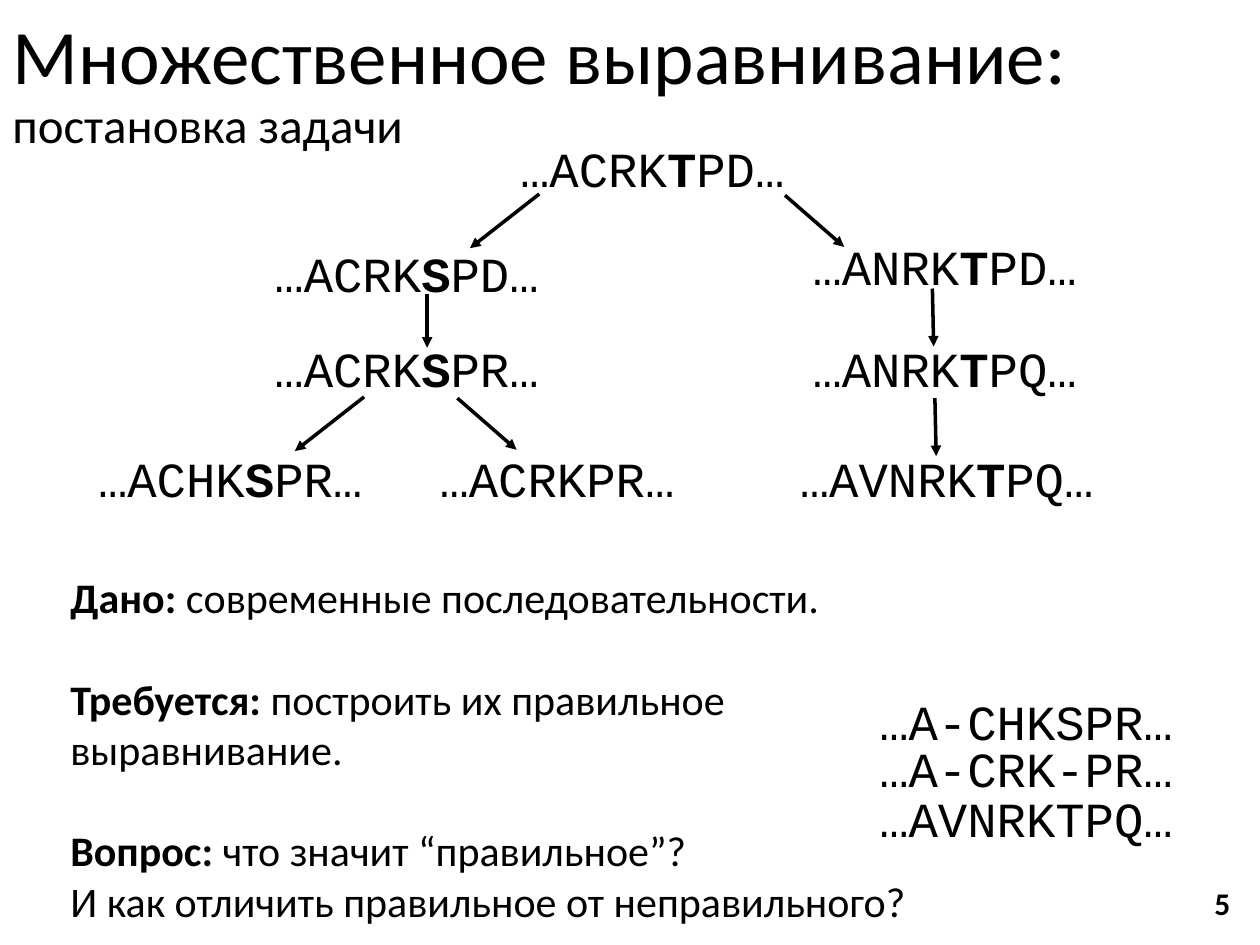
"""Build the slide that states the multiple sequence alignment problem."""
from dataclasses import dataclass

from lxml import etree
from pptx import Presentation
from pptx import util as u
from pptx.dml.color import RGBColor
from pptx.enum import shapes, text
from pptx.oxml import ns

PX = u.Inches(1) // 100
COLORS = {"ink": "000000"}
SANS, MONO = "Calibri", "Courier New"
SEQ_HEIGHT = 57


@dataclass(frozen=True)
class Run:
    text: str
    bold: bool = False
    size: int | None = None


@dataclass(frozen=True)
class Sequence:
    left: int
    top: int
    runs: tuple[Run, ...]

    @property
    def width(self) -> int:
        return 22 + 70 * sum(len(run.text) for run in self.runs) // 3


@dataclass(frozen=True)
class Arrow:
    x1: int
    y1: int
    x2: int
    y2: int


def marked(head: str, residue: str, tail: str) -> tuple[Run, ...]:
    return Run(head), Run(residue, True), Run(tail)


TITLE = (Run("Множественное выравнивание:\n"), Run("постановка задачи", size=28))
TREE = (
    Sequence(403, 105, marked("…ACRK", "T", "PD…")),
    Sequence(208, 188, marked("…ACRK", "S", "PD…")),
    Sequence(208, 264, marked("…ACRK", "S", "PR…")),
    Sequence(68, 351, marked("…ACHK", "S", "PR…")),
    Sequence(339, 351, (Run("…ACRKPR…"),)),
    Sequence(635, 183, marked("…ANRK", "T", "PD…")),
    Sequence(635, 264, marked("…ANRK", "T", "PQ…")),
    Sequence(625, 351, marked("…AVNRK", "T", "PQ…")),
)
ARROWS = (
    Arrow(428, 154, 373, 197),
    Arrow(339, 233, 339, 276),
    Arrow(289, 315, 234, 358),
    Arrow(363, 316, 410, 357),
    Arrow(623, 155, 670, 196),
    Arrow(740, 229, 741, 275),
    Arrow(742, 316, 743, 362),
)
TASK = (
    (Run("Дано: ", True), Run("современные последовательности.")),
    (Run("Требуется: ", True), Run("построить их правильное\nвыравнивание.")),
    (Run("Вопрос:", True),
     Run(" что значит “правильное”?\nИ как отличить правильное от неправильного?")),
)
ALIGNMENT = (
    Sequence(688, 544, (Run("…A-CHKSPR…"),)),
    Sequence(688, 581, (Run("…A-CRK-PR…"),)),
    Sequence(688, 621, (Run("…AVNRKTPQ…"),)),
)


def add_runs(p, runs: tuple[Run, ...]) -> None:
    for run in runs:
        for i, line in enumerate(run.text.split("\n")):
            if i:
                p.add_line_break()
            if line:
                r = p.add_run()
                r.text = line
                if run.bold:
                    r.font.bold = True
                if run.size:
                    r.font.size = u.Pt(run.size)


def add_text(s, box: tuple[int, int, int, int], paragraphs: tuple[tuple[Run, ...], ...],
             font: str, size: int, wrap: bool = False, gap: int = 0):
    sp = s.shapes.add_textbox(*(v * PX for v in box))
    tf = sp.text_frame
    tf.word_wrap = wrap
    for i, runs in enumerate(paragraphs):
        p = tf.add_paragraph() if i else tf.paragraphs[0]
        if i:
            p.space_before = u.Pt(gap)
        p.font.name = font
        p.font.size = u.Pt(size)
        p.font.color.rgb = RGBColor.from_string(COLORS["ink"])
        add_runs(p, runs)
    return tf


def add_sequence(s, seq: Sequence) -> None:
    add_text(s, (seq.left, seq.top, seq.width, SEQ_HEIGHT), (seq.runs,), MONO, 28)


def add_arrow(s, arrow: Arrow) -> None:
    ends = (v * PX for v in (arrow.x1, arrow.y1, arrow.x2, arrow.y2))
    sp = s.shapes.add_connector(shapes.MSO_CONNECTOR.STRAIGHT, *ends)
    sp.line.width = u.Pt(2)
    sp.line.color.rgb = RGBColor.from_string(COLORS["ink"])
    etree.SubElement(sp.line._get_or_add_ln(), ns.qn("a:tailEnd"), type="triangle")
    etree.SubElement(sp._element.spPr, ns.qn("a:effectLst"))


def main() -> None:
    prs = Presentation()
    prs.slide_width, prs.slide_height = 1000 * PX, 750 * PX
    s = prs.slides.add_slide(prs.slide_layouts[6])

    tf = add_text(s, (0, 2, 976, 132), (TITLE,), SANS, 44, wrap=True)
    tf.vertical_anchor = text.MSO_ANCHOR.MIDDLE
    tf.paragraphs[0].line_spacing = 0.9

    for seq in TREE:
        add_sequence(s, seq)
    for arrow in ARROWS:
        add_arrow(s, arrow)
    add_text(s, (46, 449, 909, 293), TASK, SANS, 24, wrap=True, gap=29)
    for seq in ALIGNMENT:
        add_sequence(s, seq)
    add_text(s, (954, 697, 33, 40), ((Run("5", True),),), SANS, 18)

    prs.save("out.pptx")


if __name__ == "__main__":
    main()
